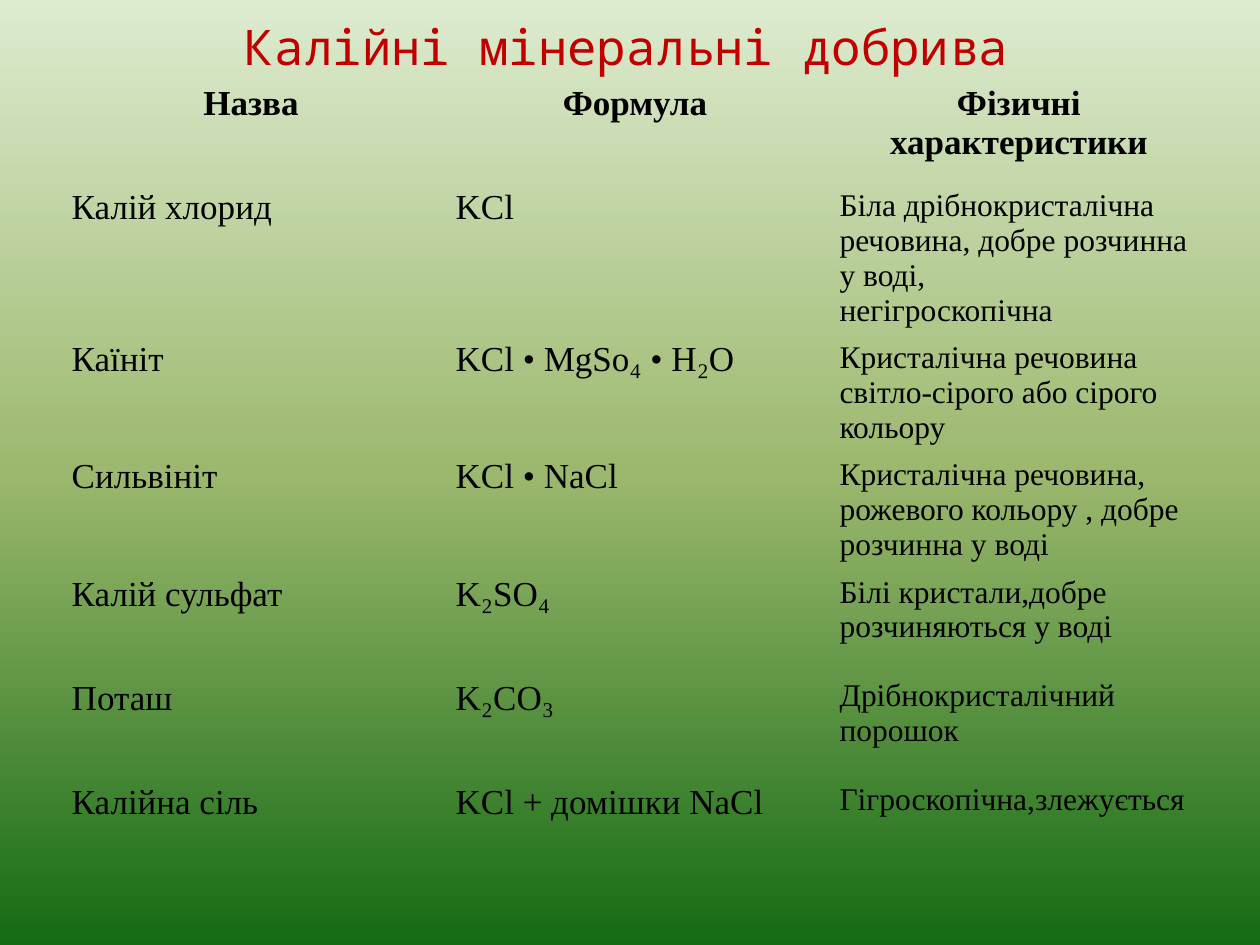
import copy

import pptx
import pptx.dml.color
import pptx.enum.text
import pptx.oxml.ns
import pptx.util

Pt = pptx.util.Pt
ALIGN = pptx.enum.text.PP_ALIGN
COLORS = {"title": "C00000", "text": "000000",
          "top": "DDEBCF", "middle": "9CB86E", "bottom": "156B13"}
NO_STYLE_NO_GRID = "{2D5ABB26-0587-4C30-8999-92F81FD0307C}"
HEADERS = ["Назва", "Формула", "Фізичні характеристики"]
FERTILIZERS = [
    ("Калій хлорид", "KCl",
     "Біла дрібнокристалічна речовина, добре розчинна у воді,\nнегігроскопічна"),
    ("Каїніт", "KCl • MgSo₄ • H₂O",
     "Кристалічна речовина світло-сірого або сірого кольору"),
    ("Сильвініт", "KCl • NaCl",
     "Кристалічна речовина,\nрожевого кольору , добре розчинна у воді"),
    ("Калій сульфат", "K₂SO₄", "Білі кристали,добре розчиняються у воді"),
    ("Поташ", "K₂CO₃", "Дрібнокристалічний порошок"),
    ("Калійна сіль", "KCl + домішки NaCl", "Гігроскопічна,злежується"),
]


def rgb(name):
    return pptx.dml.color.RGBColor.from_string(COLORS[name])


def write(tf, text, size=20, font="Times New Roman", color="text",
          bold=False, align=ALIGN.LEFT):
    tf.text = text
    for p in tf.paragraphs:
        p.alignment = align
        for r in p.runs:
            r.font.size = Pt(size)
            r.font.name = font
            r.font.bold = bold
            r.font.color.rgb = rgb(color)


def set_background(s):
    fill = s.background.fill
    fill.gradient()
    fill.gradient_angle = 270
    stops = s.element.find(".//" + pptx.oxml.ns.qn("a:gsLst"))
    stops.insert(1, copy.deepcopy(stops[0]))
    for stop, name, position in zip(fill.gradient_stops,
                                    ("top", "middle", "bottom"), (0, 0.5, 1)):
        stop.color.rgb = rgb(name)
        stop.position = position


def add_title(s, text):
    sp = s.shapes.title
    sp.left, sp.top, sp.width, sp.height = Pt(34), Pt(11.5), Pt(648), Pt(29)
    tf = sp.text_frame
    tf.auto_size = pptx.enum.text.MSO_AUTO_SIZE.NONE
    tf.vertical_anchor = pptx.enum.text.MSO_ANCHOR.MIDDLE
    write(tf, text, size=28, font="Noto Sans Mono", color="title",
          align=ALIGN.CENTER)


def add_table(s, headers, rows):
    frame = s.shapes.add_table(len(rows) + 1, len(headers), Pt(33.8), Pt(44.6),
                               Pt(658.2), Pt(59.4 * (len(rows) + 1)))
    table = frame.table
    table.first_row = table.horz_banding = False
    style = frame.element.find(".//" + pptx.oxml.ns.qn("a:tableStyleId"))
    style.text = NO_STYLE_NO_GRID
    for i, row in enumerate([headers, *rows]):
        for j, text in enumerate(row):
            cell = table.cell(i, j)
            cell.fill.background()
            if i == 0:
                write(cell.text_frame, text, bold=True, align=ALIGN.CENTER)
            else:
                write(cell.text_frame, text, size=18 if j == 2 else 20)


def main():
    prs = pptx.Presentation()
    prs.slide_width, prs.slide_height = Pt(720), Pt(540)
    s = prs.slides.add_slide(prs.slide_layouts[5])
    set_background(s)
    add_title(s, "Калійні мінеральні добрива")
    add_table(s, HEADERS, FERTILIZERS)
    prs.save("out.pptx")


if __name__ == "__main__":
    main()
